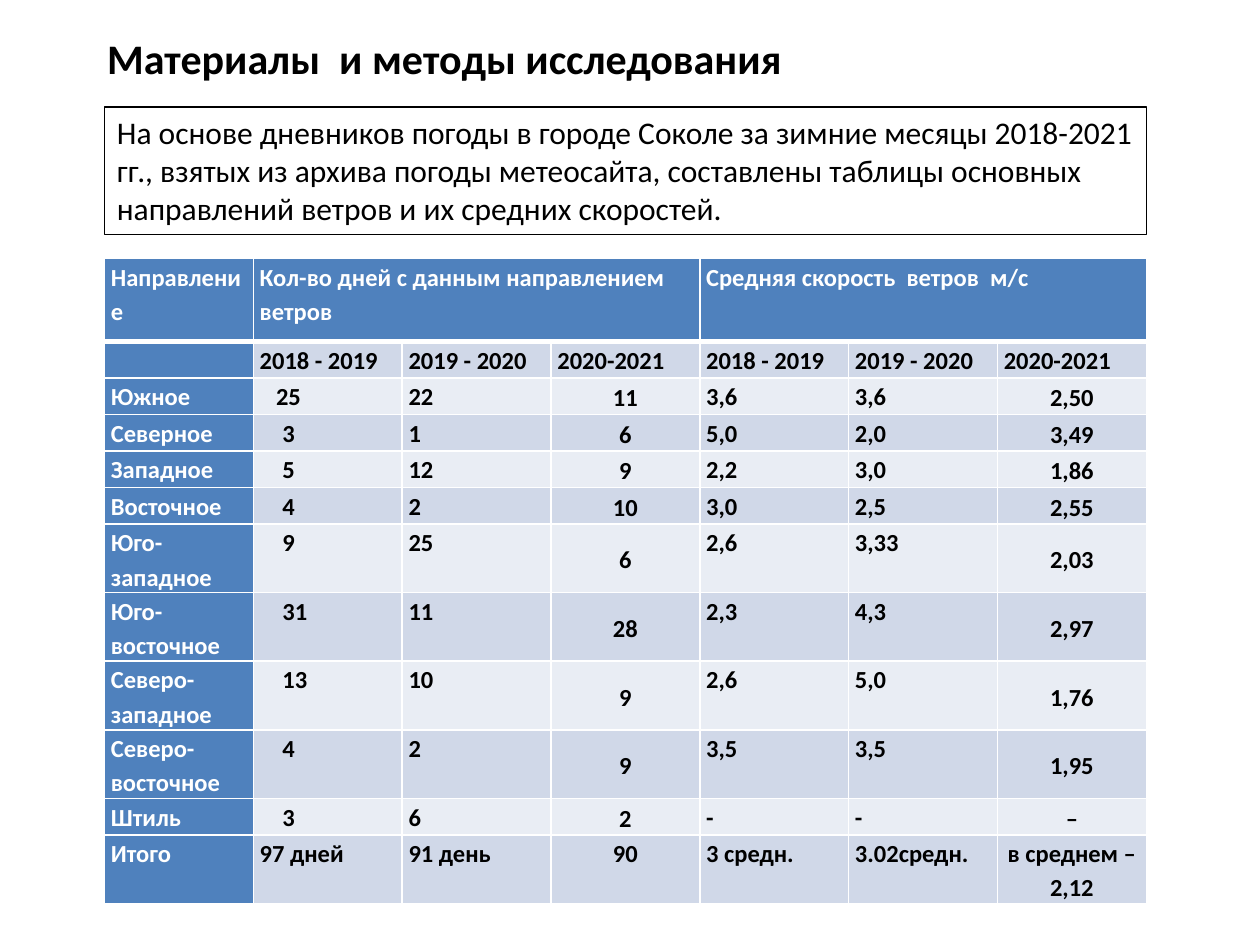
import pptx
import pptx.util
import pptx.dml.color
import pptx.enum.shapes
import pptx.enum.text
import pptx.oxml.ns
from lxml import etree

Inches, Pt = pptx.util.Inches, pptx.util.Pt
ALIGN = pptx.enum.text.PP_ALIGN
ANCHOR = pptx.enum.text.MSO_ANCHOR
COLORS = {"black": "000000", "white": "FFFFFF", "head": "4F81BD",
          "light": "E9EDF4", "dark": "D0D8E8"}


def rgb(name):
    return pptx.dml.color.RGBColor.from_string(COLORS[name])


def format_text(p, size, color, bold=False):
    for r in p.runs:
        r.font.name, r.font.size, r.font.bold = "Calibri", Pt(size), bold
        r.font.color.rgb = rgb(color)


prs = pptx.Presentation()
prs.slide_width, prs.slide_height = Inches(10), Inches(7.5)
s = prs.slides.add_slide(prs.slide_layouts[5])

# Title
title = s.shapes.title
title.left, title.top = Inches(0.75), Inches(0.21)
title.width, title.height = Inches(5.67), Inches(0.5)
title.fill.solid()
title.fill.fore_color.rgb = rgb("white")
tf = title.text_frame
tf.text = "Материалы  и методы исследования"
tf.word_wrap = True
tf.auto_size = pptx.enum.text.MSO_AUTO_SIZE.NONE
tf.vertical_anchor = ANCHOR.TOP
tf.paragraphs[0].alignment = ALIGN.LEFT
format_text(tf.paragraphs[0], 24, "black", True)

# Framed introduction
sp = s.shapes.add_shape(pptx.enum.shapes.MSO_SHAPE.RECTANGLE,
                        Inches(0.83), Inches(0.85), Inches(8.27), Inches(1.01))
sp.shadow.inherit = False
sp.fill.background()
sp.line.color.rgb = rgb("black")
sp.line.width = Pt(0.75)
tf = sp.text_frame
tf.text = ("На основе дневников погоды в городе Соколе за зимние месяцы 2018-2021 гг., "
           "взятых из архива погоды метеосайта, составлены таблицы основных "
           "направлений ветров и их средних скоростей.")
tf.word_wrap = True
tf.vertical_anchor = ANCHOR.TOP
tf.paragraphs[0].alignment = ALIGN.LEFT
format_text(tf.paragraphs[0], 18, "black")

# Wind table data
YEARS = ["2018 - 2019", "2019 - 2020", "2020-2021"]
ROWS = [
    ["Направление", "Кол-во дней с данным направлением ветров", "", "",
     "Средняя скорость  ветров  м/с", "", ""],
    [""] + YEARS * 2,
    ["Южное", "25", "22", "11", "3,6", "3,6", "2,50"],
    ["Северное", "3", "1", "6", "5,0", "2,0", "3,49"],
    ["Западное", "5", "12", "9", "2,2", "3,0", "1,86"],
    ["Восточное", "4", "2", "10", "3,0", "2,5", "2,55"],
    ["Юго-западное", "9", "25", "6", "2,6", "3,33", "2,03"],
    ["Юго-восточное", "31", "11", "28", "2,3", "4,3", "2,97"],
    ["Северо-западное", "13", "10", "9", "2,6", "5,0", "1,76"],
    ["Северо-восточное", "4", "2", "9", "3,5", "3,5", "1,95"],
    ["Штиль", "3", "6", "2", "-", "-", "–"],
    ["Итого", "97 дней", "91 день", "90", "3 средн.", "3.02средн.",
     "в среднем – 2,12"],
]
LAST = len(ROWS) - 1

# Table grid
frame = s.shapes.add_table(len(ROWS), 7, Inches(0.83), Inches(2.05),
                           Inches(8.27), Inches(5.09))
table = frame.table
for i, row in enumerate(table.rows):
    row.height = Inches(0.66 if i == 0 else 0.29)
frame.height = Inches(5.09)
for first in (1, 4):
    table.cell(0, first).merge(table.cell(0, first + 2))

# Table cells
for i, values in enumerate(ROWS):
    for j, value in enumerate(values):
        cell = table.cell(i, j)
        is_head = i == 0 or j == 0
        is_centred = i > 1 and j in (3, 6)
        cell.margin_top = cell.margin_bottom = 0
        cell.margin_left = cell.margin_right = Inches(0.07 if is_centred else 0.05)
        if j == 1 and 1 < i < LAST:
            cell.margin_left = Inches(0.18 if i == 2 else 0.23)
        cell.vertical_anchor = ANCHOR.MIDDLE if is_centred and i < LAST else ANCHOR.TOP

        p = cell.text_frame.paragraphs[0]
        p.text = value
        p.line_spacing = 1.15
        if is_centred:
            p.alignment = ALIGN.CENTER
        elif i > 1 and j == 2:
            p.alignment = ALIGN.JUSTIFY
        format_text(p, 14, "white" if is_head else "black", True)
        if not value:
            etree.SubElement(p._p, pptx.oxml.ns.qn("a:endParaRPr"), sz="1400")

        # White borders, thicker under the header; they precede the fill
        tcPr = cell._tc.get_or_add_tcPr()
        for side in ("L", "R", "T", "B"):
            thick = (i, side) in ((0, "B"), (1, "T"))
            ln = etree.SubElement(tcPr, pptx.oxml.ns.qn(f"a:ln{side}"),
                                  w=str(Pt(3 if thick else 1)))
            fill = etree.SubElement(ln, pptx.oxml.ns.qn("a:solidFill"))
            etree.SubElement(fill, pptx.oxml.ns.qn("a:srgbClr"), val=COLORS["white"])
        cell.fill.solid()
        cell.fill.fore_color.rgb = rgb("head" if is_head else "dark" if i % 2 else "light")

prs.save("out.pptx")
